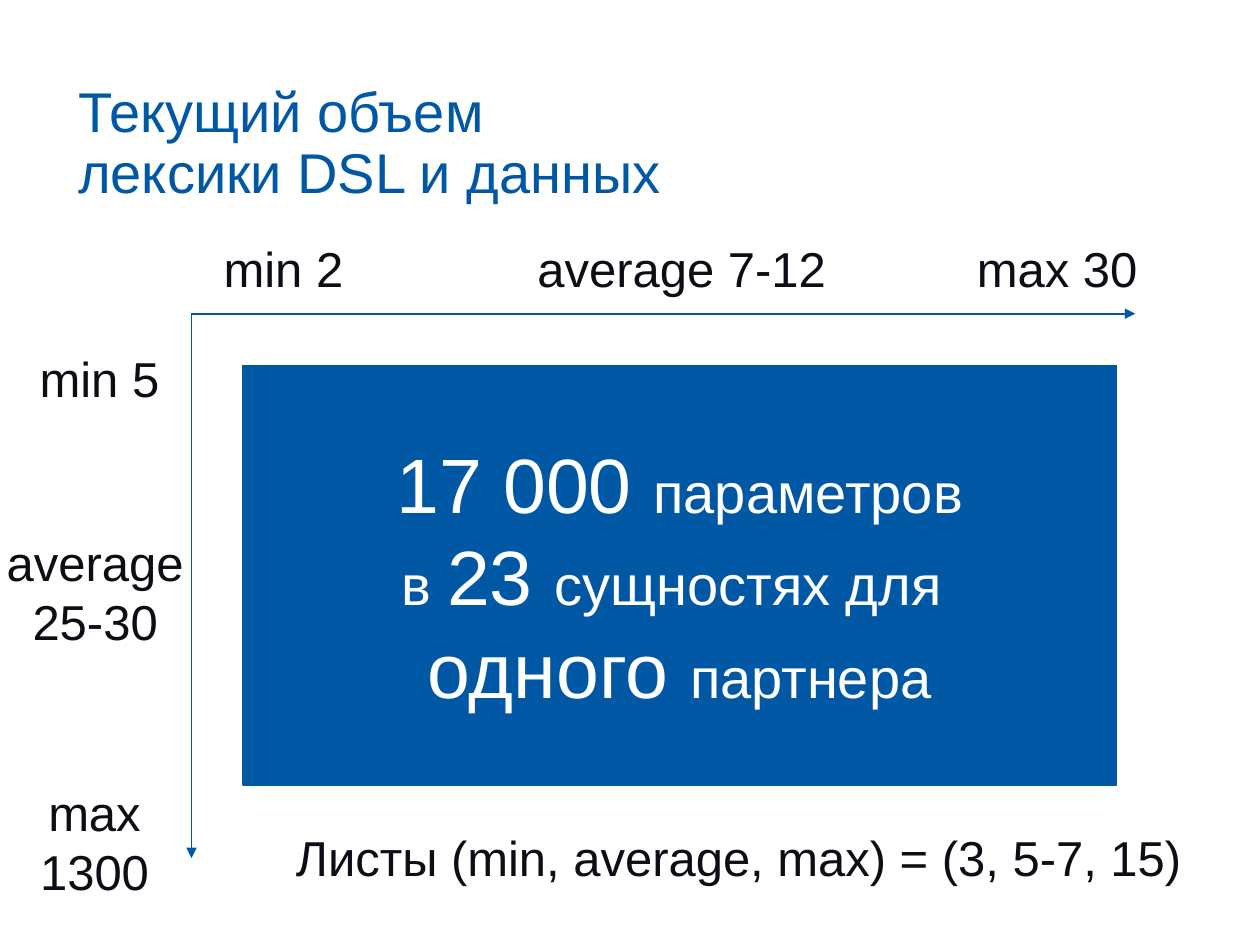
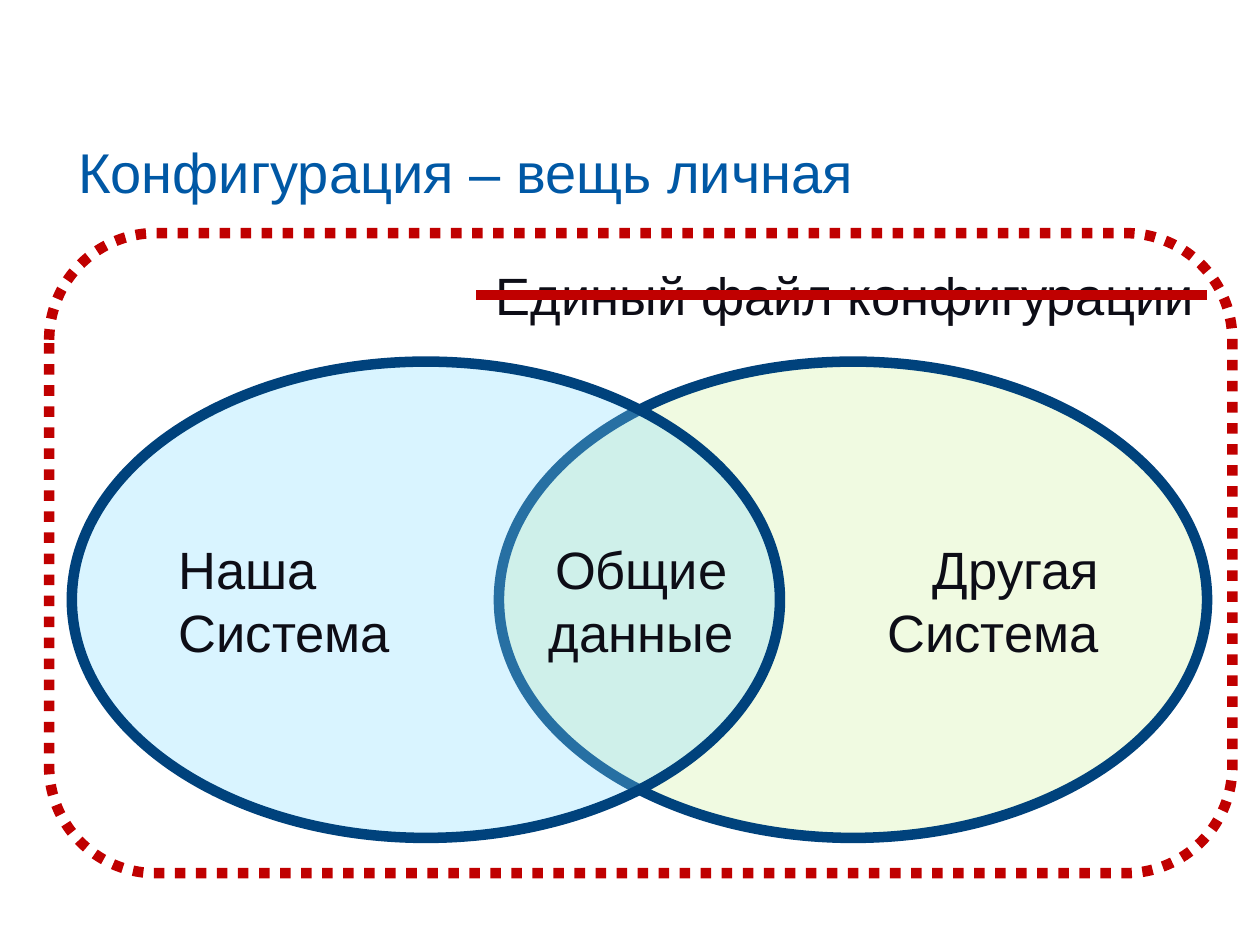
from collections import namedtuple
from lxml.etree import SubElement
from pptx import Presentation
from pptx.dml.color import RGBColor
from pptx.enum.dml import MSO_LINE
from pptx.enum.shapes import MSO_CONNECTOR, MSO_SHAPE
from pptx.enum.text import MSO_ANCHOR, MSO_AUTO_SIZE, PP_ALIGN
from pptx.oxml.ns import qn
from pptx.util import Inches, Pt

BLUE = RGBColor(0x00, 0x58, 0xA5)
NAVY = RGBColor(0x00, 0x42, 0x7C)
INK = RGBColor(0x0D, 0x0D, 0x16)
WHITE = RGBColor(0xFF, 0xFF, 0xFF)
RED = RGBColor(0xC0, 0x00, 0x00)
SKY = RGBColor(0x84, 0xDB, 0xFF)
LIME = RGBColor(0xCF, 0xF0, 0x9E)
FONT = "Arial"
LEFT, CENTER, RIGHT = PP_ALIGN.LEFT, PP_ALIGN.CENTER, PP_ALIGN.RIGHT

Box = namedtuple("Box", "x y w h")


def inches(*values):
    return [Inches(v) for v in values]


def style(p, size, color, align):
    p.alignment = align
    p.font.name = FONT
    p.font.size = Pt(size)
    p.font.color.rgb = color


def add_title_slide(prs, title):
    slide = prs.slides.add_slide(prs.slide_layouts[5])
    sp = slide.shapes.title
    sp.left, sp.top, sp.width, sp.height = inches(0.52, 0.43, 6.67, 1.25)
    tf = sp.text_frame
    tf.text = title
    tf.auto_size = MSO_AUTO_SIZE.NONE
    tf.vertical_anchor = MSO_ANCHOR.BOTTOM
    p = tf.paragraphs[0]
    p.line_spacing = 0.9
    style(p, 32, BLUE, LEFT)
    return slide


def add_label(slide, box, text, size, align=CENTER, wrap=False):
    tf = slide.shapes.add_textbox(*inches(*box)).text_frame
    tf.word_wrap = wrap
    tf.text = text
    for p in tf.paragraphs:
        style(p, size, INK, align)


def add_shape(slide, kind, box, line_color, line_width, fill=None, opacity=None):
    sp = slide.shapes.add_shape(kind, *inches(*box))
    sp.shadow.inherit = False
    sp.line.color.rgb = line_color
    sp.line.width = Pt(line_width)
    if fill is None:
        sp.fill.background()
    else:
        sp.fill.solid()
        sp.fill.fore_color.rgb = fill
    if opacity:
        clr = sp._element.spPr.find(qn("a:solidFill"))[0]
        SubElement(clr, qn("a:alpha"), val=str(opacity * 1000))
    return sp


def add_line(slide, start, end, color, width, arrow=False):
    cx = slide.shapes.add_connector(MSO_CONNECTOR.STRAIGHT, *inches(*start, *end))
    cx.line.color.rgb = color
    cx.line.width = Pt(width)
    if arrow:
        SubElement(cx.line._get_or_add_ln(), qn("a:tailEnd"), type="triangle")
    SubElement(cx._element.spPr, qn("a:effectLst"))


def add_volume_panel(slide, box):
    sp = add_shape(slide, MSO_SHAPE.RECTANGLE, box, BLUE, 0.75, BLUE)
    tf = sp.text_frame
    tf.vertical_anchor = MSO_ANCHOR.MIDDLE
    lines = [
        [("17 000 ", 44), ("параметров", 32)],
        [("в ", 32), ("23 ", 44), ("сущностях для ", 32)],
        [("одного ", 44), ("партнера", 32)],
    ]
    for i, parts in enumerate(lines):
        p = tf.add_paragraph() if i else tf.paragraphs[0]
        style(p, 32, WHITE, CENTER)
        for text, size in parts:
            r = p.add_run()
            r.text = text
            r.font.size = Pt(size)


def add_volume_chart(slide, box):
    x, y, w, h = box
    add_volume_panel(slide, Box(x + 0.41, y + 0.41, 6.93, 3.33))
    for end in ((x + w, y), (x, y + h)):
        add_line(slide, (x, y), end, BLUE, 1, arrow=True)
    for dx, width, text in (
        (0.15, 1.16, "min 2"),
        (2.46, 2.86, "average 7-12"),
        (5.84, 2.06, "max 30"),
    ):
        add_label(slide, Box(x + dx, y - 0.65, width, 0.57), text, 28)
    for dx, dy, width, height, text in (
        (-1.31, 0.23, 1.16, 0.57, "min 5"),
        (-1.58, 1.69, 1.63, 1.04, "average\n25-30"),
        (-1.31, 3.67, 1.08, 1.04, "max\n1300"),
    ):
        add_label(slide, Box(x + dx, y + dy, width, height), text, 28)
    add_label(slide, Box(x + 0.73, y + 4.03, 7.49, 0.57),
              "Листы (min, average, max) = (3, 5-7, 15)", 28, LEFT, wrap=True)


def add_venn(slide, box):
    x, y, w, h = box
    oval_w = 5.62
    for left, fill in ((x + w - oval_w, LIME), (x, SKY)):
        add_shape(slide, MSO_SHAPE.OVAL, Box(left, y, oval_w, h), NAVY, 6, fill, 30)
    for dx, width, text, align in (
        (0.75, 1.89, "Наша\nСистема", LEFT),
        (3.68, 1.68, "Общие\nданные", CENTER),
        (6.36, 1.89, "Другая\nСистема", RIGHT),
    ):
        add_label(slide, Box(x + dx, y + 1.34, width, 1.11), text, 30, align)


def add_crossed_frame(slide, box):
    x, y, w, h = box
    label = Box(x + 3.39, y + 0.19, 5.8, 0.61)
    add_label(slide, label, "Единый файл конфигурации", 30, RIGHT)
    frame = add_shape(slide, MSO_SHAPE.ROUNDED_RECTANGLE, box, RED, 6)
    frame.line.dash_style = MSO_LINE.ROUND_DOT
    strike_y = label.y + 0.3
    add_line(slide, (label.x, strike_y), (label.x + label.w, strike_y), RED, 6)


def main():
    prs = Presentation()
    prs.slide_width, prs.slide_height = inches(10, 7.5)

    slide = add_title_slide(prs, "Текущий объем\vлексики DSL и данных")
    add_volume_chart(slide, Box(1.52, 2.49, 7.49, 4.32))

    slide = add_title_slide(prs, "Конфигурация – вещь личная")
    add_venn(slide, Box(0.57, 2.87, 9.01, 3.78))
    add_crossed_frame(slide, Box(0.39, 1.85, 9.39, 5.08))

    prs.save("out.pptx")


if __name__ == "__main__":
    main()
